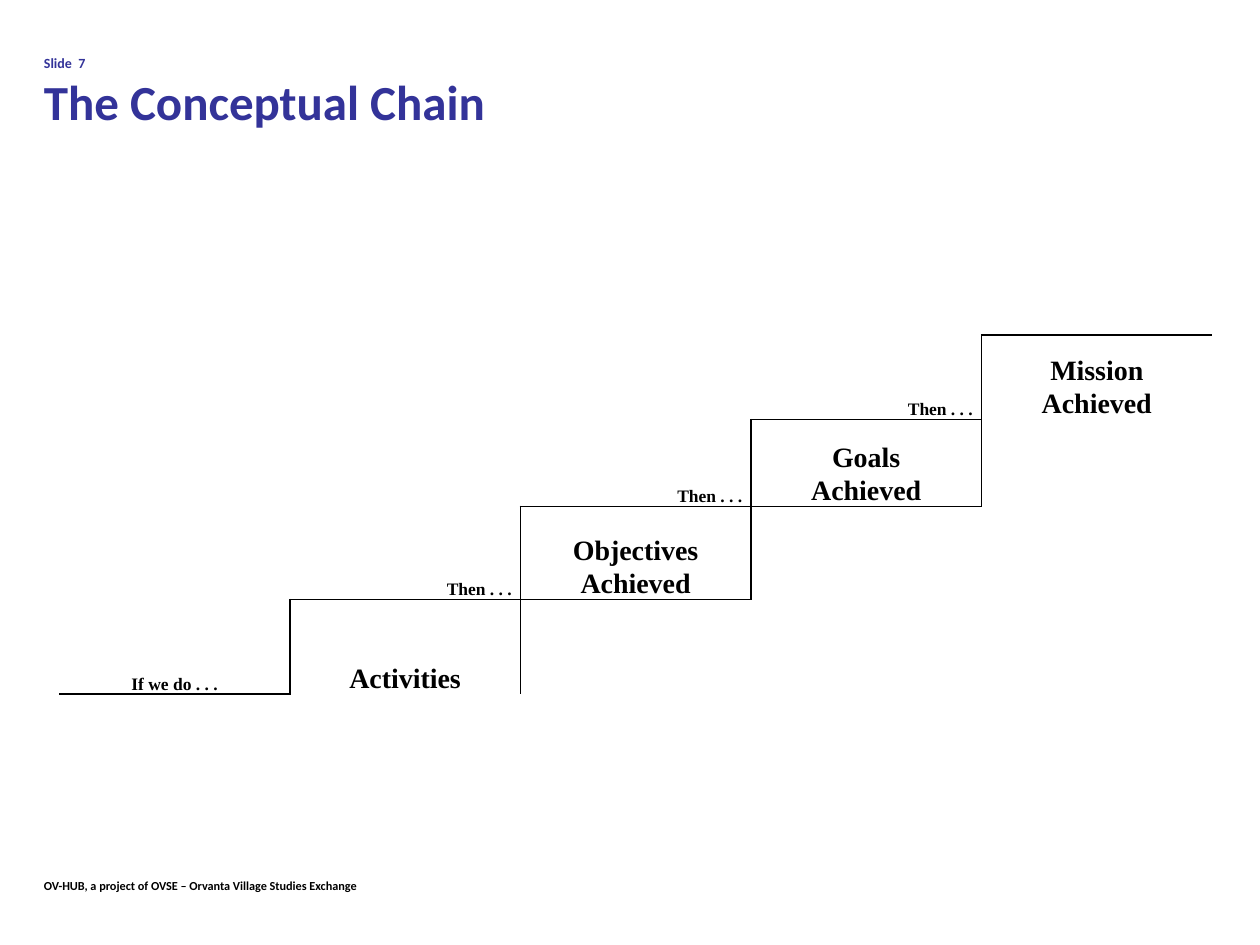
from lxml.etree import SubElement
from pptx import Presentation
from pptx.dml.color import RGBColor
from pptx.enum.text import MSO_ANCHOR, PP_ALIGN
from pptx.oxml.ns import qn
from pptx.util import Inches, Pt

BLACK = RGBColor(0x00, 0x00, 0x00)
INDIGO = RGBColor(0x33, 0x33, 0x99)
NO_STYLE = "{2D5ABB26-0587-4C30-8999-92F81FD0307C}"

SLIDE_LABEL = "Slide  7"
TITLE = "The Conceptual Chain"
FOOTER = "OV-HUB, a project of OVSE – Orvanta Village Studies Exchange"

# Steps from top to bottom: row height, lead-in, its alignment, result lines
STEPS = [
    (0.67, "Then . . .", PP_ALIGN.RIGHT, ["Mission", "Achieved"]),
    (0.69, "Then . . .", PP_ALIGN.RIGHT, ["Goals", "Achieved"]),
    (0.74, "Then . . .", PP_ALIGN.RIGHT, ["Objectives", "Achieved"]),
    (0.75, "If we do . . .", PP_ALIGN.CENTER, ["Activities"]),
]
COL_WIDTH = 1.83


def add_run(p, text, size, font, color):
    r = p.add_run()
    r.text = text
    r.font.size = Pt(size)
    r.font.name = font
    r.font.bold = True
    r.font.color.rgb = color


def add_text_box(slide, left, top, width, height, anchor):
    tf = slide.shapes.add_textbox(
        Inches(left), Inches(top), Inches(width), Inches(height)).text_frame
    tf.word_wrap = True
    tf.vertical_anchor = anchor
    return tf.paragraphs[0]


def add_borders(cell, sides):
    tc_pr = cell._tc.get_or_add_tcPr()
    for side in sides:
        ln = SubElement(tc_pr, qn(f"a:ln{side}"), w=str(Pt(1)))
        fill = SubElement(ln, qn("a:solidFill"))
        SubElement(fill, qn("a:srgbClr"), val=str(BLACK))


def fill_cell(cell, lines, size, align, sides):
    cell.vertical_anchor = MSO_ANCHOR.BOTTOM
    cell.margin_left = cell.margin_right = Inches(0.07)
    cell.margin_top = cell.margin_bottom = 0
    tf = cell.text_frame
    for i, line in enumerate(lines):
        p = tf.add_paragraph() if i else tf.paragraphs[0]
        p.alignment = align
        p.line_spacing = 1.07
        add_run(p, line, size, "Times New Roman", BLACK)
    add_borders(cell, sides)


prs = Presentation()
prs.slide_width, prs.slide_height = Inches(10), Inches(7.5)
s = prs.slides.add_slide(prs.slide_layouts[6])

# Footer and title
p = add_text_box(s, 0.25, 6.92, 5, 0.22, MSO_ANCHOR.TOP)
add_run(p, FOOTER, 7, "Calibri", BLACK)
p = add_text_box(s, 0.25, 0.3, 8.42, 0.87, MSO_ANCHOR.MIDDLE)
add_run(p, SLIDE_LABEL, 8, "Calibri", INDIGO)
p.add_line_break()
add_run(p, TITLE, 28, "Calibri", INDIGO)

# Staircase table: each row steps one column to the left
n = len(STEPS)
table = s.shapes.add_table(
    n, n + 1, Inches(0.47), Inches(2.66), Inches(COL_WIDTH * (n + 1)),
    Inches(sum(step[0] for step in STEPS))).table
table.first_row = table.horz_banding = False
table._tbl.tblPr.find(qn("a:tableStyleId")).text = NO_STYLE
for col in table.columns:
    col.width = Inches(COL_WIDTH)
for row, (height, lead, align, result) in enumerate(STEPS):
    table.rows[row].height = Inches(height)
    fill_cell(table.cell(row, n - 1 - row), [lead], 10, align, "RB")
    fill_cell(table.cell(row, n - row), result, 16, PP_ALIGN.CENTER, "LT")
for cell in table.iter_cells():
    cell.fill.background()

prs.save("out.pptx")
